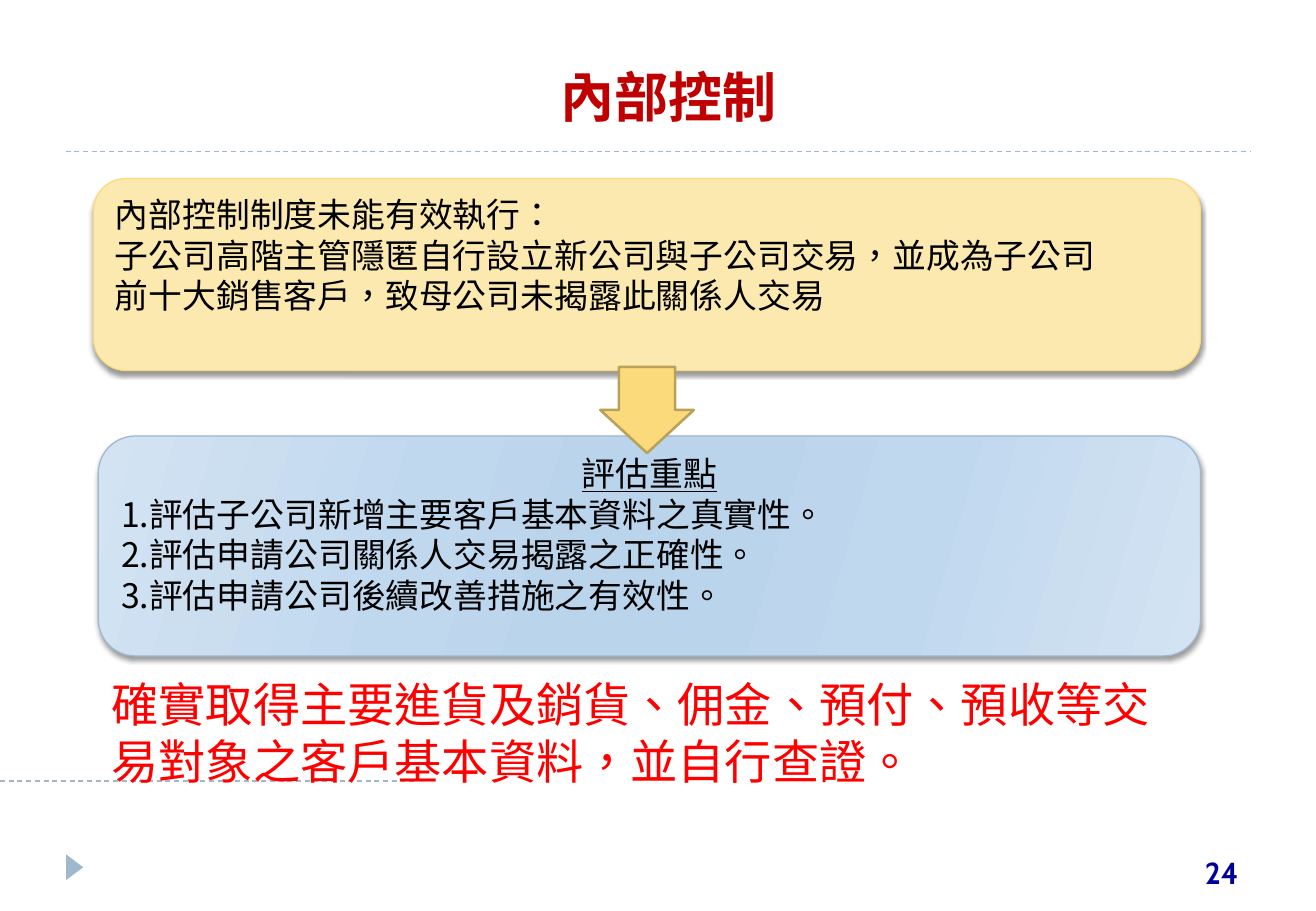
from lxml.etree import SubElement
from pptx import Presentation
from pptx.dml.color import RGBColor
from pptx.enum.dml import MSO_LINE
from pptx.enum.shapes import MSO_CONNECTOR, MSO_SHAPE
from pptx.enum.text import MSO_ANCHOR, PP_ALIGN
from pptx.oxml.ns import qn
from pptx.util import Inches, Pt

BLACK = RGBColor(0x00, 0x00, 0x00)
RED = RGBColor(0xFF, 0x00, 0x00)
CRIMSON = RGBColor(0xC0, 0x00, 0x00)
NAVY = RGBColor(0x00, 0x00, 0x99)
STEEL = RGBColor(0x9F, 0xB8, 0xCD)
CREAM = RGBColor(0xFC, 0xE9, 0xAF)
GOLD = RGBColor(0xFA, 0xDA, 0x7A)
OLIVE = RGBColor(0xB9, 0xA1, 0x5A)
PALE = RGBColor(0xD3, 0xE3, 0xF2)
SKY = RGBColor(0xC0, 0xD8, 0xEE)
BLUE = RGBColor(0xBA, 0xD4, 0xEC)
SHEEN = [(0, PALE), (30, SKY), (45, BLUE), (55, BLUE), (73, SKY), (100, PALE)]

SERIF = "Times New Roman"
CJK = "Noto Sans CJK SC"
LEFT, MID, RIGHT = PP_ALIGN.LEFT, PP_ALIGN.CENTER, PP_ALIGN.RIGHT


def tint(parent, color):
    return SubElement(parent, qn("a:srgbClr"), val=str(color))


class Page:
    def __init__(self, deck):
        self.slide = deck.slides.add_slide(deck.slide_layouts[6])
        self.shapes = self.slide.shapes

    def rule(self, start, end, y):
        """Draw a dashed horizontal line."""
        line = self.shapes.add_connector(
            MSO_CONNECTOR.STRAIGHT, Inches(start), Inches(y), Inches(end), Inches(y))
        line.line.color.rgb = STEEL
        line.line.width = Pt(0.75)
        line.line.dash_style = MSO_LINE.DASH
        SubElement(line._element.spPr, qn("a:effectLst"))

    def shape(self, kind, box, fill, edge=None, width=0.75, adj=(), turn=0):
        """Add a preset shape; a list as fill makes a gradient."""
        item = self.shapes.add_shape(kind, *map(Inches, box))
        item.shadow.inherit = False
        item.rotation = turn
        for i, value in enumerate(adj):
            item.adjustments[i] = value
        if isinstance(fill, list):
            self.blend(item, fill)
        else:
            item.fill.solid()
            item.fill.fore_color.rgb = fill
        if edge is None:
            item.line.fill.background()
        else:
            item.line.color.rgb = edge
            item.line.width = Pt(width)
        return item

    def blend(self, item, stops):
        item.fill.gradient()
        grad = item._element.spPr.find(qn("a:gradFill"))
        for child in list(grad):
            grad.remove(child)
        group = SubElement(grad, qn("a:gsLst"))
        for pos, color in stops:
            tint(SubElement(group, qn("a:gs"), pos=str(pos * 1000)), color)
        SubElement(grad, qn("a:lin"), ang=str(16 * 60000), scaled="0")

    def panel(self, box, fill, edge):
        """Add a rounded box with a soft shadow below it."""
        item = self.shape(MSO_SHAPE.ROUNDED_RECTANGLE, box, fill, edge, adj=[0.167])
        effect = item._element.spPr.find(qn("a:effectLst"))
        shade = SubElement(effect, qn("a:outerShdw"), blurRad=str(Pt(3)),
                           dist=str(Pt(2)), dir=str(90 * 60000), rotWithShape="0")
        SubElement(tint(shade, BLACK), qn("a:alpha"), val="40000")
        item.text_frame.vertical_anchor = MSO_ANCHOR.TOP
        return item.text_frame

    def label(self, box, anchor=MSO_ANCHOR.TOP):
        frame = self.shapes.add_textbox(*map(Inches, box)).text_frame
        frame.vertical_anchor = anchor
        return frame

    def text(self, frame, lines, size, color, face, align=LEFT, bold=False, under=False):
        """Add one paragraph for each line."""
        frame.word_wrap = True
        for line in lines:
            first = frame.paragraphs[0]
            para = frame.add_paragraph() if first.runs else first
            para.alignment = align
            run = para.add_run()
            run.text = line
            font = run.font
            font.size, font.name = Pt(size), face
            font.bold, font.underline = bold, under
            font.color.rgb = color
            props = run._r.get_or_add_rPr()
            props.set("lang", "zh-TW")
            SubElement(props, qn("a:ea"), typeface=CJK)


def main():
    deck = Presentation()
    deck.slide_width, deck.slide_height = Inches(10.83), Inches(7.5)
    page = Page(deck)

    page.rule(0, 3.43, 6.43)
    page.rule(0.54, 10.29, 1.25)
    page.shape(MSO_SHAPE.ISOSCELES_TRIANGLE, (0.51, 7.07, 0.21, 0.14), STEEL, turn=90)

    title = page.label((0.46, 0.36, 10.08, 0.86), MSO_ANCHOR.MIDDLE)
    page.text(title, ["內部控制"], 32, CRIMSON, "TeX Gyre Bonum", MID, bold=True)
    number = page.label((7.94, 6.98, 2.35, 0.4))
    page.text(number, ["24"], 18, NAVY, "Cabin", RIGHT, bold=True)

    issue = page.panel((0.77, 1.47, 9.11, 1.58), CREAM, GOLD)
    page.text(issue, [
        "內部控制制度未能有效執行：",
        "子公司高階主管隱匿自行設立新公司與子公司交易，並成為子公司",
        "前十大銷售客戶，致母公司未揭露此關係人交易",
    ], 20, BLACK, SERIF)

    focus = page.panel((0.81, 3.59, 9.07, 1.81), SHEEN, STEEL)
    page.text(focus, ["評估重點"], 20, BLACK, SERIF, MID, under=True)
    page.text(focus, [
        "1.評估子公司新增主要客戶基本資料之真實性。",
        "2.評估申請公司關係人交易揭露之正確性。",
        "3.評估申請公司後續改善措施之有效性。",
    ], 20, BLACK, CJK)

    page.shape(MSO_SHAPE.LEFT_ARROW, (4.97, 2.99, 0.71, 0.77), GOLD, OLIVE, 1.5,
               adj=[0.6, 0.5], turn=270)

    advice = page.label((0.82, 5.51, 9.06, 1.04))
    page.text(advice, [
        "確實取得主要進貨及銷貨、佣金、預付、預收等交易對象之客戶基本資料，並自行查證。",
    ], 28, RED, "Arial")

    deck.save("out.pptx")


if __name__ == "__main__":
    main()
